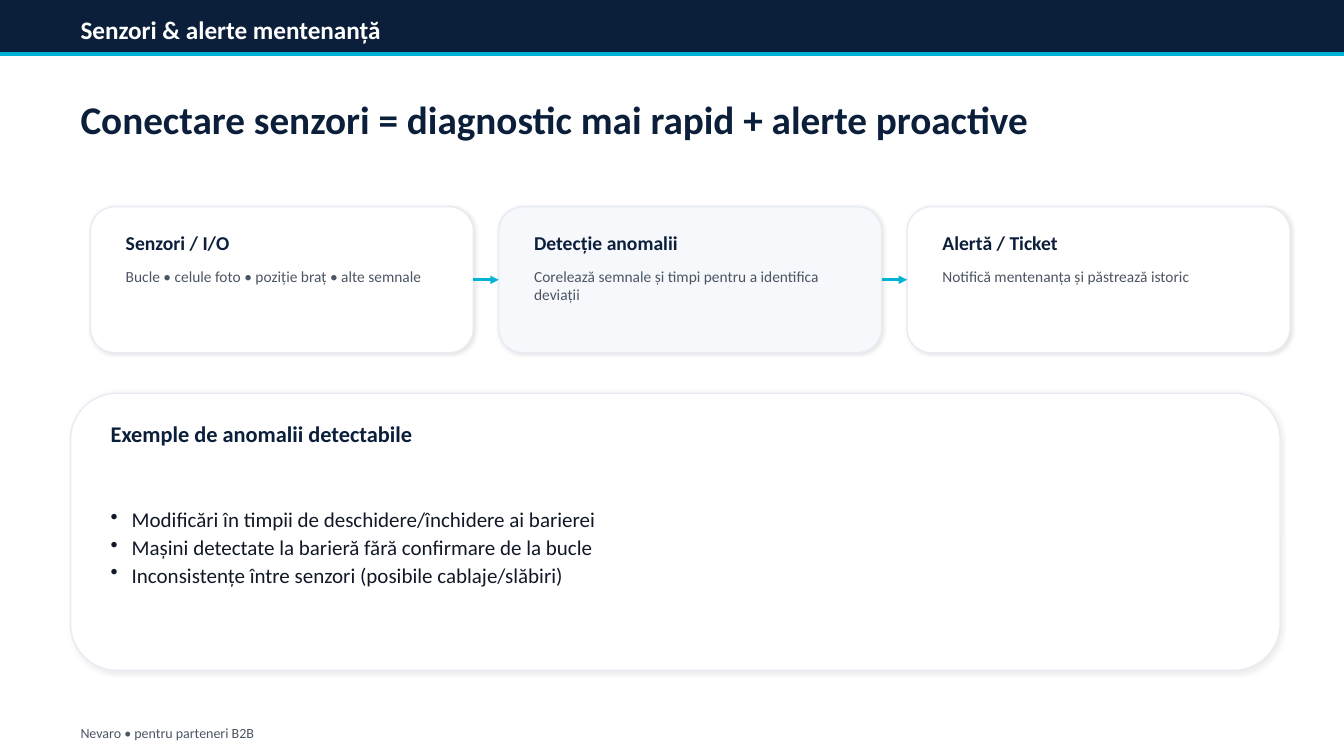
"""Build the slide about sensors and maintenance alerts."""
from lxml.etree import SubElement
from pptx import Presentation
from pptx.dml.color import RGBColor
from pptx.enum.shapes import MSO_CONNECTOR, MSO_SHAPE
from pptx.enum.text import MSO_ANCHOR
from pptx.oxml.ns import qn
from pptx.util import Cm, Pt

NAVY, CYAN, WHITE = "0B1F3B", "00B3D6", "FFFFFF"
GRAY, INK, BORDER, PALE = "4B5563", "111827", "E7ECF4", "F6F8FB"

presentation = Presentation()
presentation.slide_width = Cm(33.87)
presentation.slide_height = Cm(19.05)
slide = presentation.slides.add_slide(presentation.slide_layouts[6])


def add_box(kind, left, top, width, height, fill, line, shadow=None):
    shape = slide.shapes.add_shape(kind, Cm(left), Cm(top), Cm(width), Cm(height))
    shape.fill.solid()
    shape.fill.fore_color.rgb = RGBColor.from_string(fill)
    shape.line.color.rgb = RGBColor.from_string(line)
    shape.line.width = Pt(1)
    shape.shadow.inherit = False
    if shadow:
        opacity, distance = shadow
        effects = shape._element.spPr.find(qn("a:effectLst"))
        outer = SubElement(effects, qn("a:outerShdw"), blurRad=str(Pt(3)),
                           dist=str(Pt(distance)), dir="2700000",
                           algn="ctr", rotWithShape="0")
        color = SubElement(outer, qn("a:srgbClr"), val="000000")
        SubElement(color, qn("a:alpha"), val=str(opacity * 1000))


def add_text(text, left, top, width, height, size, color, bold=False,
             anchor=MSO_ANCHOR.MIDDLE):
    box = slide.shapes.add_textbox(Cm(left), Cm(top), Cm(width), Cm(height))
    text_frame = box.text_frame
    text_frame.word_wrap = True
    text_frame.vertical_anchor = anchor
    text_frame.text = text
    for paragraph in text_frame.paragraphs:
        for run in paragraph.runs:
            run.font.name = "Calibri"
            run.font.size = Pt(size)
            run.font.bold = bold
            run.font.color.rgb = RGBColor.from_string(color)
    return text_frame


add_box(MSO_SHAPE.RECTANGLE, 0, 0, 33.87, 1.4, NAVY, NAVY)
add_box(MSO_SHAPE.RECTANGLE, 0, 1.32, 33.87, 0.08, CYAN, CYAN)
add_text("Senzori & alerte mentenanță", 1.78, 0.3, 30.3, 0.89, 18, WHITE, True)
add_text("Nevaro • pentru parteneri B2B", 1.78, 18.16, 30.3, 0.64, 10, GRAY)
add_text("Conectare senzori = diagnostic mai rapid + alerte proactive",
         1.78, 2.29, 30.99, 1.4, 28, NAVY, True)

steps = [
    ("Senzori / I/O", "Bucle • celule foto • poziție braț • alte semnale", WHITE),
    ("Detecție anomalii",
     "Corelează semnale și timpi pentru a identifica deviații", PALE),
    ("Alertă / Ticket", "Notifică mentenanța și păstrează istoric", WHITE),
]
card_left, card_top, card_width, card_height, card_pitch = 2.28, 5.21, 9.65, 3.68, 10.29
for index, (heading, detail, fill) in enumerate(steps):
    left = card_left + index * card_pitch
    add_box(MSO_SHAPE.ROUNDED_RECTANGLE, left, card_top, card_width, card_height,
            fill, BORDER, (10, 1.2))
    add_text(heading, left + 0.64, 5.66, 8.38, 0.89, 14, NAVY, True)
    add_text(detail, left + 0.64, 6.6, 8.38, 1.91, 11, GRAY, anchor=MSO_ANCHOR.TOP)

arrow_y = Cm(card_top + card_height / 2)
for index in range(len(steps) - 1):
    left = card_left + index * card_pitch
    arrow = slide.shapes.add_connector(MSO_CONNECTOR.STRAIGHT, Cm(left + card_width),
                                       arrow_y, Cm(left + card_pitch), arrow_y)
    arrow.line.color.rgb = RGBColor.from_string(CYAN)
    arrow.line.width = Pt(2)
    properties = arrow._element.spPr
    SubElement(properties.find(qn("a:ln")), qn("a:tailEnd"), type="triangle")
    SubElement(properties, qn("a:effectLst"))

add_box(MSO_SHAPE.ROUNDED_RECTANGLE, 1.78, 9.91, 30.48, 6.98, WHITE, BORDER, (8, 1))
add_text("Exemple de anomalii detectabile", 2.54, 10.41, 15.24, 1.02, 16, NAVY, True)
anomalies = [
    "Modificări în timpii de deschidere/închidere ai barierei",
    "Mașini detectate la barieră fără confirmare de la bucle",
    "Inconsistențe între senzori (posibile cablaje/slăbiri)",
]
anomaly_list = add_text("\n".join(anomalies), 2.54, 11.56, 28.96, 4.39, 15, INK)
for paragraph in anomaly_list.paragraphs:
    properties = paragraph._p.get_or_add_pPr()
    properties.set("marL", str(Cm(0.53)))
    properties.set("indent", str(-Cm(0.53)))
    SubElement(properties, qn("a:buChar"), char="•")
    paragraph.line_spacing = 1.1

presentation.save("out.pptx")
